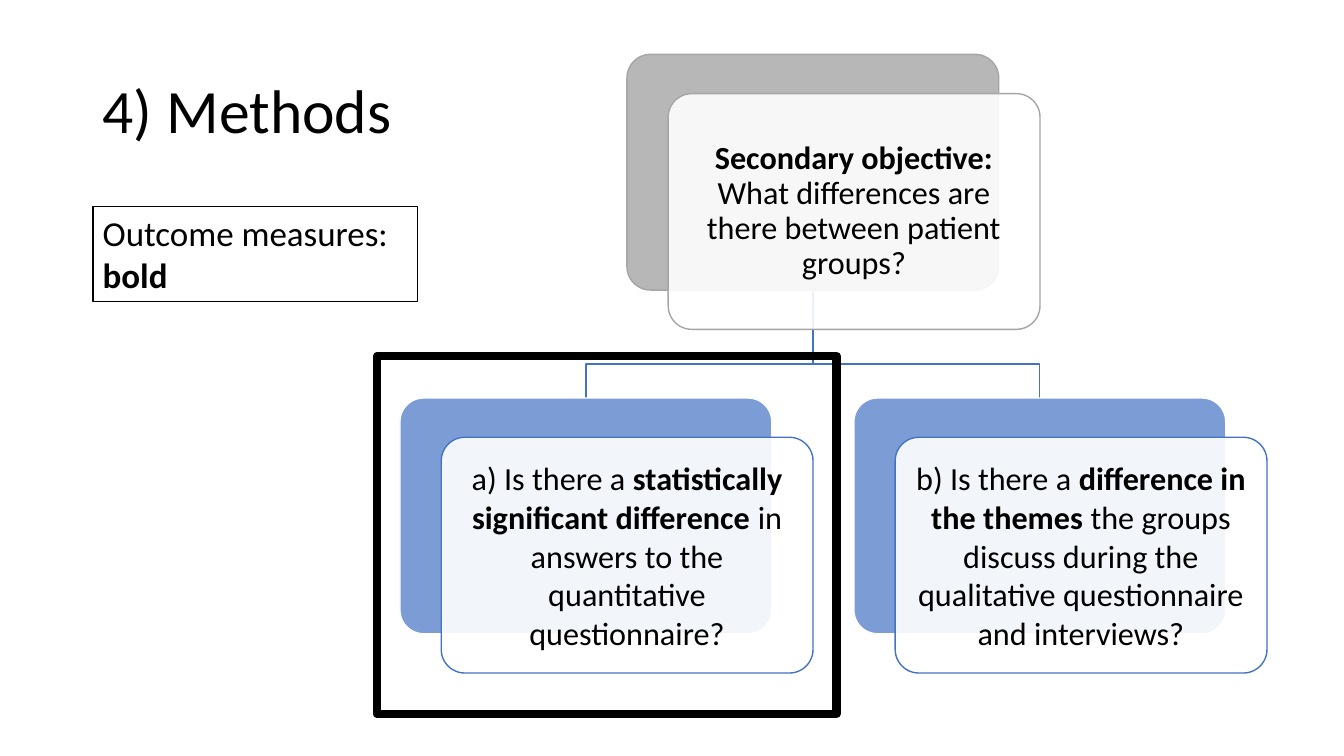
from lxml import etree
from pptx import Presentation
from pptx import util as u
from pptx.dml.color import RGBColor
from pptx.enum import shapes, text
from pptx.oxml.ns import qn

BLACK = RGBColor(0x00, 0x00, 0x00)
WHITE = RGBColor(0xFF, 0xFF, 0xFF)
GREY = RGBColor(0xA5, 0xA5, 0xA5)
BLUE = RGBColor(0x44, 0x72, 0xC4)

CARD_W, CARD_H = 9.37, 5.94
SHIFT_X, SHIFT_Y = 1.04, 0.99
ROOT_X, ROOT_Y = 15.8, 1.37
CHILD_Y, CHILD_OFFSET = 10.03, 5.72
JOINT_Y = 9.17

OBJECTIVE = [
    ("Secondary objective: ", True),
    ("What differences are there between patient groups?", False),
]
QUESTIONS = [
    [
        ("a) Is there a ", False),
        ("statistically significant difference ", True),
        ("in answers to the quantitative questionnaire?", False),
    ],
    [
        ("b) Is there a ", False),
        ("difference in the themes ", True),
        ("the groups discuss during the qualitative questionnaire and interviews?", False),
    ],
]


def apply(target, values):
    for name, value in values.items():
        setattr(target, name, value)


def style(shape, fill, line, weight=1, opacity=100):
    shape.shadow.inherit = False
    if fill is None:
        shape.fill.background()
    else:
        shape.fill.solid()
        shape.fill.fore_color.rgb = fill
        if opacity < 100:
            color = shape.fill._xPr.find(".//" + qn("a:srgbClr"))
            etree.SubElement(color, qn("a:alpha")).set("val", str(opacity * 1000))
    shape.line.color.rgb = line
    shape.line.width = u.Pt(weight)


def write(shape, spans, size, frame_format, para_format):
    frame = shape.text_frame
    apply(frame, {"word_wrap": True, **frame_format})
    para = frame.paragraphs[0]
    apply(para, para_format)
    for words, bold in spans:
        span = para.add_run()
        span.text = words
        apply(span.font, {"name": "Calibri", "size": u.Pt(size), "bold": bold})
        span.font.color.rgb = BLACK


def add_box(page, kind, box):
    return page.shapes.add_shape(kind, *map(u.Cm, box))


def add_title(page, box):
    title = page.shapes.add_textbox(*map(u.Cm, box))
    write(title, [("4) Methods", False)], 44,
          {"vertical_anchor": text.MSO_ANCHOR.MIDDLE}, {"line_spacing": 0.9})


def add_card(page, left, top, spans, spacing, back_color, back_line, front_line, opacity):
    rounded = shapes.MSO_SHAPE.ROUNDED_RECTANGLE
    back = add_box(page, rounded, (left, top, CARD_W, CARD_H))
    front = add_box(page, rounded, (left + SHIFT_X, top + SHIFT_Y, CARD_W, CARD_H))
    for card in (back, front):
        card.adjustments[0] = 0.1
    style(back, back_color, back_line, opacity=opacity)
    style(front, WHITE, front_line, opacity=90)
    margins = {f"margin_{side}": u.Cm(0.25) for side in ("left", "right", "top", "bottom")}
    write(front, spans, 23, {"vertical_anchor": text.MSO_ANCHOR.MIDDLE, **margins},
          {"alignment": text.PP_ALIGN.CENTER, "line_spacing": spacing})


def add_branch(page, start, end):
    points = [(start[0], JOINT_Y), (end[0], JOINT_Y), end]
    builder = page.shapes.build_freeform(*map(u.Cm, start))
    builder.add_line_segments([(u.Cm(x), u.Cm(y)) for x, y in points], close=False)
    style(builder.convert_to_shape(), None, BLUE)


def add_tree(page):
    child_lefts = [ROOT_X - CHILD_OFFSET, ROOT_X + CHILD_OFFSET]
    for left in reversed(child_lefts):
        add_branch(page, (ROOT_X + CARD_W / 2, ROOT_Y + CARD_H), (left + CARD_W / 2, CHILD_Y))
    add_card(page, ROOT_X, ROOT_Y, OBJECTIVE, 0.9, GREY, GREY, GREY, 80)
    for left, question in zip(child_lefts, QUESTIONS):
        add_card(page, left, CHILD_Y, question, 1.0, BLUE, WHITE, BLUE, 70)


def add_highlight(page, box):
    style(add_box(page, shapes.MSO_SHAPE.RECTANGLE, box), None, BLACK, weight=6)


def add_legend(page, box):
    legend = add_box(page, shapes.MSO_SHAPE.RECTANGLE, box)
    style(legend, WHITE, BLACK)
    write(legend, [("Outcome measures: ", False), ("bold", True)], 25,
          {"vertical_anchor": text.MSO_ANCHOR.TOP}, {"alignment": text.PP_ALIGN.LEFT})


def main():
    deck = Presentation()
    apply(deck, {"slide_width": u.Cm(33.87), "slide_height": u.Cm(19.05)})
    page = deck.slides.add_slide(deck.slide_layouts[6])
    add_title(page, (2.34, 1.02, 29.21, 3.68))
    add_tree(page)
    add_highlight(page, (9.5, 8.97, 11.58, 9.02))
    add_legend(page, (2.34, 5.21, 8.18, 2.39))
    deck.save("out.pptx")


if __name__ == "__main__":
    main()
